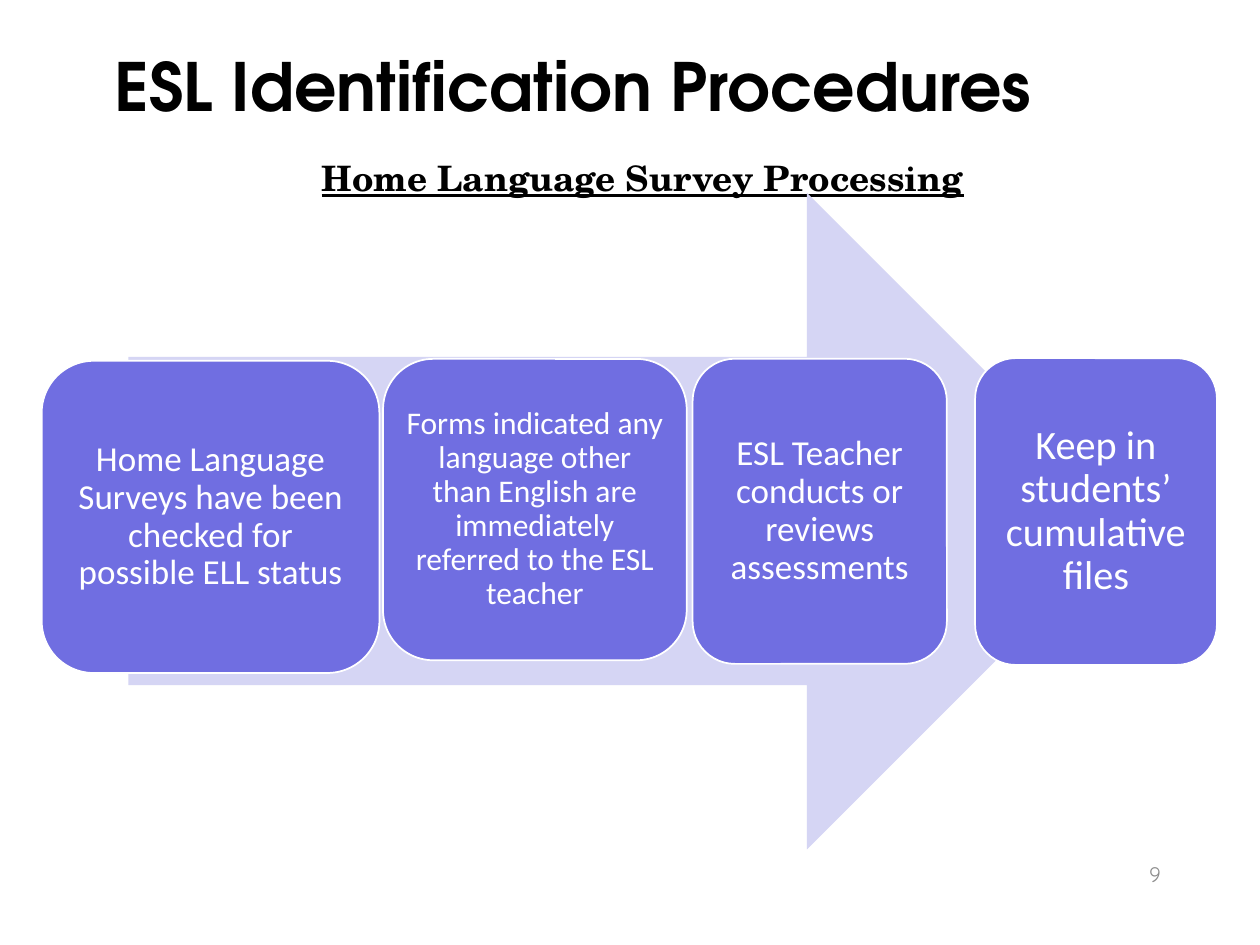
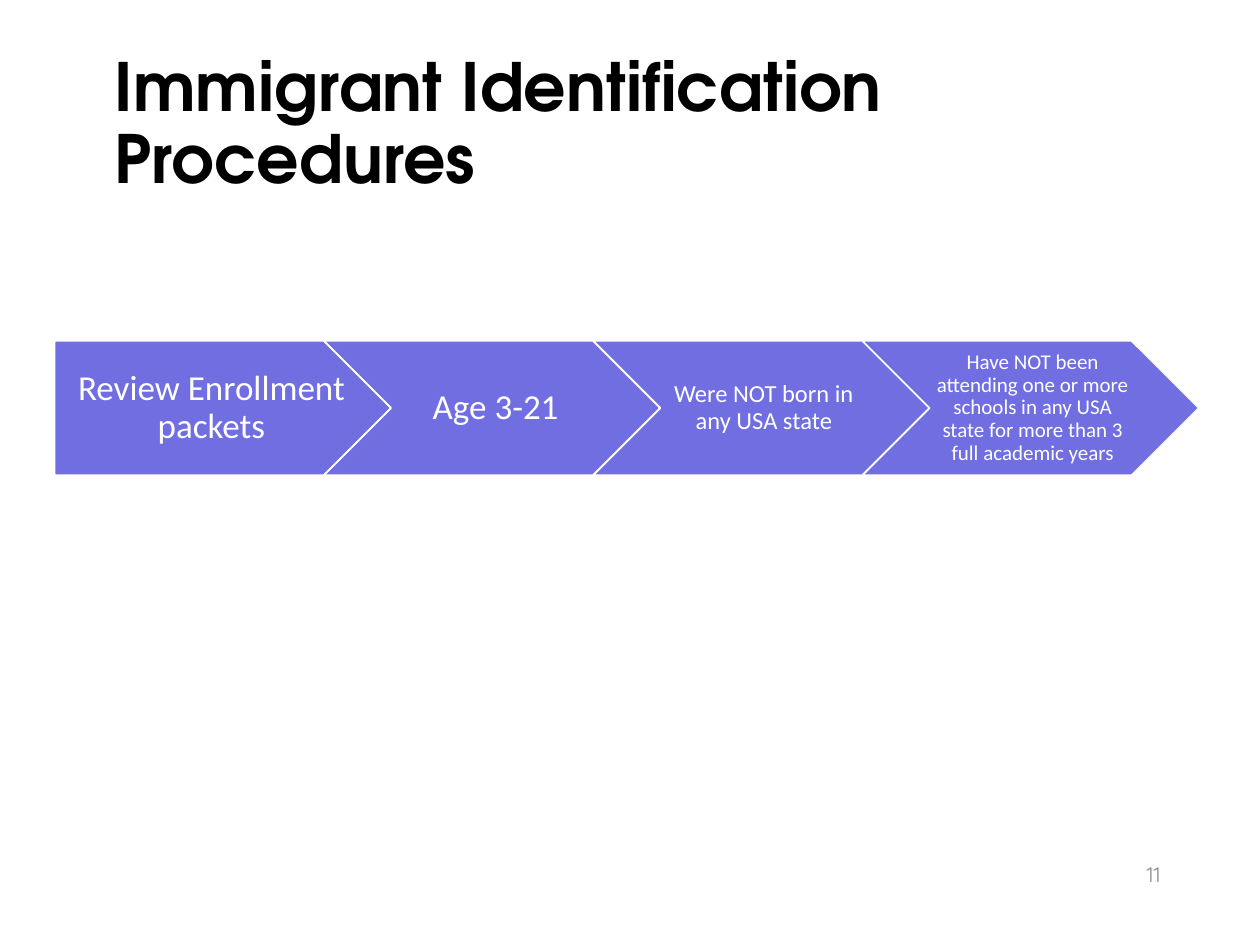
import dataclasses

import pptx
import pptx.dml.color
import pptx.enum.shapes
import pptx.enum.text
import pptx.util

Pt = pptx.util.Pt
SHAPES = pptx.enum.shapes.MSO_SHAPE
ALIGN = pptx.enum.text.PP_ALIGN
ANCHOR = pptx.enum.text.MSO_ANCHOR


@dataclasses.dataclass(frozen=True)
class Theme:
    """Colours, fonts and type sizes of the presentation."""
    ink: str = "000000"
    step: str = "706EE1"
    flow: str = "D5D5F4"
    paper: str = "FFFFFF"
    muted: str = "8C8C8C"
    title_font: str = "TeX Gyre Adventor"
    subtitle_font: str = "TeX Gyre Schola"
    step_font: str = "Calibri"
    number_font: str = "Quicksand"
    title_size: float = 38
    subtitle_size: float = 20
    number_size: float = 12
    step_large: float = 23
    step_normal: float = 20
    step_medium: float = 18
    step_small: float = 14
    step_tiny: float = 12


THEME = Theme()


def rgb(value):
    """Turn a hex string into a colour."""
    return pptx.dml.color.RGBColor.from_string(value)


def write(frame, text, *, font, size, color, align=ALIGN.LEFT, anchor=ANCHOR.TOP,
          insets=(7.2, 3.6, 7.2, 3.6), spacing=0.9, bold=False, underline=False):
    """Fill a text frame with one formatted paragraph."""
    frame.word_wrap = True
    frame.vertical_anchor = anchor
    (frame.margin_left, frame.margin_top,
     frame.margin_right, frame.margin_bottom) = map(Pt, insets)
    paragraph = frame.paragraphs[0]
    paragraph.alignment = align
    paragraph.line_spacing = spacing
    run = paragraph.add_run()
    run.text = text
    run.font.name = font
    run.font.size = Pt(size)
    run.font.color.rgb = rgb(color)
    run.font.bold = bold
    run.font.underline = underline


def add_text(slide, box, text, **style):
    """Add a text box at left, top, width, height."""
    write(slide.shapes.add_textbox(*map(Pt, box)).text_frame, text, **style)


def add_block(slide, preset, box, fill, outline=None):
    """Add a flat preset shape, with a thin outline if a colour is given."""
    block = slide.shapes.add_shape(preset, *map(Pt, box))
    block.shadow.inherit = False
    block.fill.solid()
    block.fill.fore_color.rgb = rgb(fill)
    if outline:
        block.line.color.rgb = rgb(outline)
        block.line.width = Pt(1)
    else:
        block.line.fill.background()
    return block


def add_step(slide, preset, box, text, size, insets):
    """Add one labelled step of a process."""
    step = add_block(slide, preset, box, THEME.step, THEME.paper)
    write(step.text_frame, text, font=THEME.step_font, size=size, color=THEME.paper,
          align=ALIGN.CENTER, anchor=ANCHOR.MIDDLE, insets=insets)


def add_page(deck, title, number):
    """Add a blank slide with its title and slide number."""
    slide = deck.slides.add_slide(deck.slide_layouts[6])
    add_text(slide, (58.3, 27.4, 627, 76), title, font=THEME.title_font,
             size=THEME.title_size, color=THEME.ink, bold=True)
    add_text(slide, (508.3, 485.3, 162, 28.8), number, font=THEME.number_font,
             size=THEME.number_size, color=THEME.muted, align=ALIGN.RIGHT,
             anchor=ANCHOR.MIDDLE, spacing=1.0)
    return slide


def build_esl(deck):
    """Build the survey processing slide."""
    slide = add_page(deck, "ESL Identification Procedures", "9")
    add_text(slide, (56.9, 88.6, 620.6, 342.7), "Home Language Survey Processing",
             font=THEME.subtitle_font, size=THEME.subtitle_size, color=THEME.ink,
             align=ALIGN.CENTER, bold=True, underline=True)
    add_block(slide, SHAPES.RIGHT_ARROW, (73.4, 110.2, 575.3, 375.1), THEME.flow)
    survey_steps = [
        ((23.8, 206.2, 193, 178.4), THEME.step_normal, 5.8,
         "Home Language Surveys have been checked for possible ELL status"),
        ((218.9, 205.1, 173.5, 172.2), THEME.step_medium, 5,
         "Forms indicated any language other than English are immediately "
         "referred to the ESL teacher"),
        ((395.8, 205, 145.3, 174.4), THEME.step_normal, 5.8,
         "ESL Teacher conducts or reviews assessments"),
        ((557.2, 204.7, 138.2, 175.3), THEME.step_large, 7.2,
         "Keep in students’ cumulative files"),
    ]
    for box, size, inset, text in survey_steps:
        add_step(slide, SHAPES.ROUNDED_RECTANGLE, box, text, size, (inset,) * 4)


def build_immigrant(deck):
    """Build the immigrant criteria slide."""
    slide = add_page(deck, "Immigrant Identification Procedures", "11")
    criteria = [
        ("Review Enrollment packets", THEME.step_normal, (8.4, 4.2, 2.1, 4.2)),
        ("Age 3-21", THEME.step_normal, (6.3, 4.2, 2.1, 4.2)),
        ("Were NOT born in any USA state", THEME.step_small, (4.4, 2.9, 1.5, 2.9)),
        ("Have NOT been attending one or more schools in any USA state "
         "for more than 3 full academic years", THEME.step_tiny, (3.8, 2.5, 1.3, 2.5)),
    ]
    left, pitch, width = 31.2, 153.85, 192.3
    for index, (text, size, insets) in enumerate(criteria):
        preset = SHAPES.CHEVRON if index else SHAPES.PENTAGON
        add_step(slide, preset, (left + index * pitch, 194.7, width, 76.9),
                 text, size, insets)


def main():
    """Build and save the presentation."""
    deck = pptx.Presentation()
    deck.slide_width, deck.slide_height = Pt(720), Pt(540)
    build_esl(deck)
    build_immigrant(deck)
    deck.save("out.pptx")


if __name__ == "__main__":
    main()
